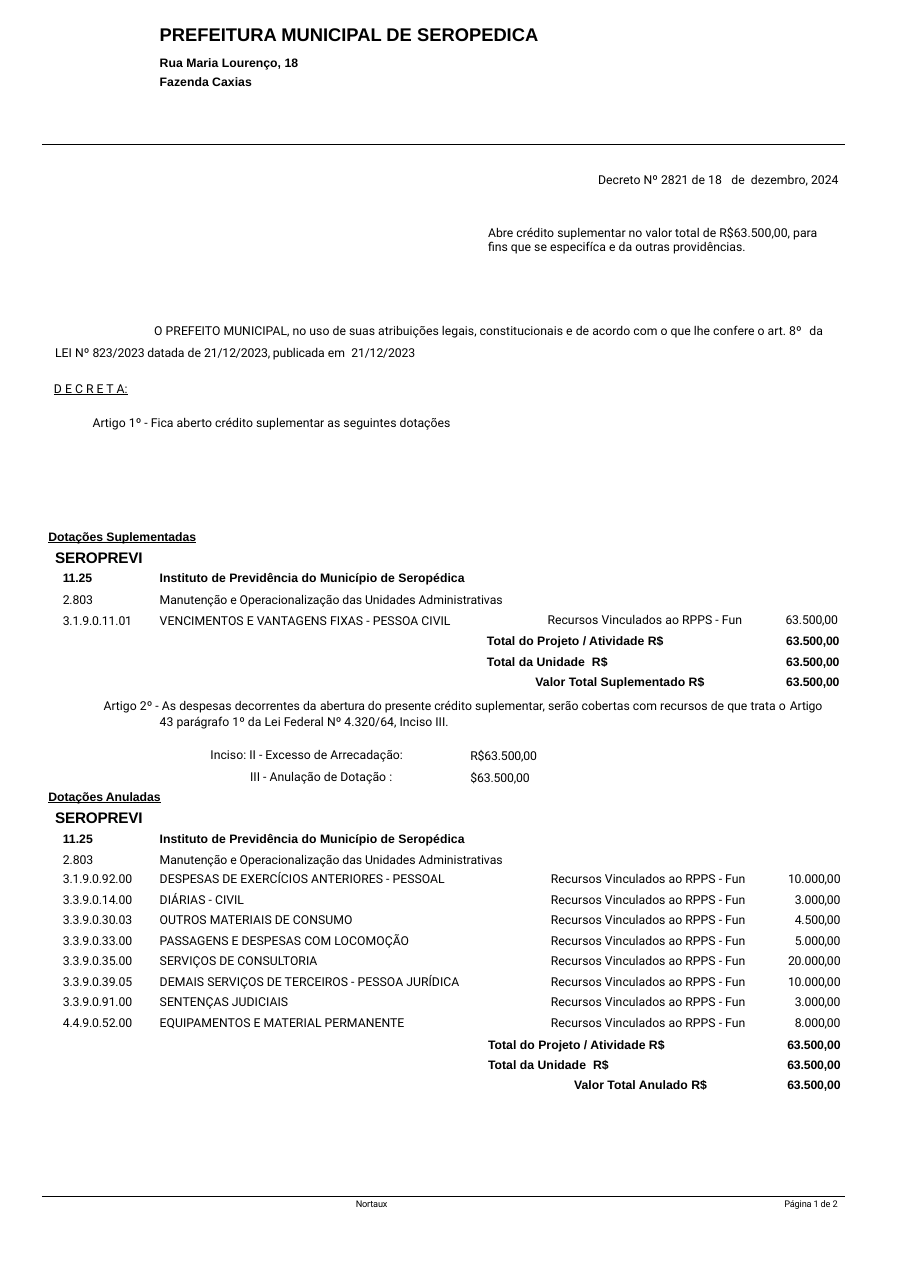
from lxml.etree import SubElement
from pptx import Presentation
from pptx.dml.color import RGBColor
from pptx.enum.shapes import MSO_CONNECTOR as CONNECTOR
from pptx.enum.text import PP_ALIGN as ALIGN
from pptx.oxml.ns import qn
from pptx.util import Inches, Pt

COLORS = {"ink": "000000"}
INK = RGBColor.from_string(COLORS["ink"])
BOLD = {"font": "Arial", "bold": True}
TIGHT = {"tracking": -0.1}
RIGHT = {"align": ALIGN.RIGHT}
UNIT = "Instituto de Previdência do Município de Seropédica"
ACTIVITY = "Manutenção e Operacionalização das Unidades Administrativas"
FUND = "Recursos Vinculados ao RPPS - Fun"
TOTAL = "63.500,00"
PROJECT_TOTAL = "Total do Projeto / Atividade R$"
UNIT_TOTAL = ["Total da Unidade", (" ", 2.2), "R$"]
CANCELLED = [
    ("3.1.9.0.92.00", "DESPESAS DE EXERCÍCIOS ANTERIORES - PESSOAL", "10.000,00"),
    ("3.3.9.0.14.00", "DIÁRIAS - CIVIL", "3.000,00"),
    ("3.3.9.0.30.03", "OUTROS MATERIAIS DE CONSUMO", "4.500,00"),
    ("3.3.9.0.33.00", "PASSAGENS E DESPESAS COM LOCOMOÇÃO", "5.000,00"),
    ("3.3.9.0.35.00", "SERVIÇOS DE CONSULTORIA", "20.000,00"),
    ("3.3.9.0.39.05", "DEMAIS SERVIÇOS DE TERCEIROS - PESSOA JURÍDICA", "10.000,00"),
    ("3.3.9.0.91.00", "SENTENÇAS JUDICIAIS", "3.000,00"),
    ("4.4.9.0.52.00", "EQUIPAMENTOS E MATERIAL PERMANENTE", "8.000,00"),
]


def write(paragraph, text, size=8, font="Roboto", bold=False, underline=False,
          tracking=0, align=ALIGN.LEFT, left=0.01, first=0, line=None, before=0):
    """Fill a paragraph; text is a string or a list of strings and (string, tracking) pairs."""
    properties = paragraph._p.get_or_add_pPr()
    properties.set("marL", str(Inches(left)))
    properties.set("indent", str(Inches(first)))
    paragraph.alignment = align
    paragraph.space_before = Pt(before)
    if line:
        paragraph.line_spacing = line
    for piece in [text] if isinstance(text, str) else text:
        words, spacing = (piece, tracking) if isinstance(piece, str) else piece
        run = paragraph.add_run()
        run.text = words
        run.font.size = Pt(size)
        run.font.name = font
        run.font.bold = bold
        run.font.underline = underline
        run.font.color.rgb = INK
        if spacing:
            run._r.get_or_add_rPr().set("spc", str(round(spacing * 100)))


def add_text(slide, x, y, width, height, *paragraphs, top=0.01):
    """Add a text box; each paragraph is a (text, format) pair."""
    frame = slide.shapes.add_textbox(
        Inches(x), Inches(y), Inches(width), Inches(height)).text_frame
    frame.word_wrap = True
    frame.margin_left = frame.margin_right = frame.margin_bottom = 0
    frame.margin_top = Inches(top)
    for index, (text, style) in enumerate(paragraphs):
        write(frame.add_paragraph() if index else frame.paragraphs[0], text, **style)


def add_rule(slide, y):
    rule = slide.shapes.add_connector(
        CONNECTOR.STRAIGHT, Inches(0.38), Inches(y), Inches(7.67), Inches(y))
    rule.line.color.rgb = INK
    rule.line.width = Pt(0.75)
    SubElement(rule._element.spPr, qn("a:effectLst"))


def add_table(slide, x, y, widths, heights):
    table = slide.shapes.add_table(
        len(heights), len(widths), Inches(x), Inches(y),
        Inches(sum(widths)), Inches(sum(heights))).table
    table.first_row = table.horz_banding = False
    for column, width in zip(table.columns, widths):
        column.width = Inches(width)
    for row, height in zip(table.rows, heights):
        row.height = Inches(height)
    for cell in table.iter_cells():
        cell.fill.background()
        cell.margin_left = cell.margin_right = cell.margin_top = cell.margin_bottom = 0
        SubElement(cell.text_frame.paragraphs[0]._p, qn("a:endParaRPr")).set("sz", "800")
    return table


def fill_cell(cell, text, top=0.02, right=0, **style):
    cell.margin_top = Inches(top)
    cell.margin_right = Inches(right)
    write(cell.text_frame.paragraphs[0], text, **style)


def fill_totals(table, first_row, labels, tops, label_styles):
    """Write the three closing rows, with amounts in the last column."""
    last = len(table.columns) - 1
    for row, (label, top, style) in enumerate(zip(labels, tops, label_styles), first_row):
        if last > 1:
            table.cell(row, 0).merge(table.cell(row, last - 1))
        fill_cell(table.cell(row, 0), label, top, **style, **BOLD)
        fill_cell(table.cell(row, last), TOTAL, top, 0.04, **RIGHT, **TIGHT, **BOLD)


def add_section_title(slide, y, width, title):
    add_text(slide, 0.43, y, width, 0.41,
             (title, dict(BOLD, underline=True, tracking=-0.05)),
             ("SEROPREVI", dict(BOLD, **TIGHT, size=10, left=0.07, before=3.4)), top=0.05)


def add_header(slide):
    add_text(slide, 1.44, 0.2, 3.49, 0.62,
             ("PREFEITURA MUNICIPAL DE SEROPEDICA", dict(BOLD, size=12)),
             ("Rua Maria Lourenço, 18", dict(BOLD, line=1.25, before=4.5)),
             ("Fazenda Caxias", dict(BOLD, line=1.25)))
    add_rule(slide, 1.31)
    add_text(slide, 5.42, 1.55, 2.24, 0.16,
             (["Decreto Nº 2821 de 18", (" ", 4), "de", (" ", 2), "dezembro, 2024"], {}))


def add_preamble(slide):
    add_text(slide, 4.42, 2.03, 3.04, 0.29,
             ("Abre crédito suplementar no valor total de R$63.500,00, para fins que se "
              "especifíca e da outras providências.", {"line": Pt(9.2)}), top=0.02)
    add_text(slide, 0.48, 2.86, 7.09, 1.06,
             (["O PREFEITO MUNICIPAL, no uso de suas atribuições legais, constitucionais e de "
               "acordo com o que lhe confere o art. 8º", (" ", 2), "da LEI Nº ",
               ("823/2023 datada", -0.1), " de ", ("21/12/2023, publicada", -0.1), " em",
               (" ", 2), ("21/12/2023", -0.1)], {"left": 0.02, "first": 0.9, "line": 1.48}),
             ("D E C R E T A:", {"underline": True, "before": 14}),
             ("Artigo 1º - Fica aberto crédito suplementar as seguintes dotações",
              {"left": 0.36, "before": 13}))


def add_supplemented(slide):
    add_section_title(slide, 4.75, 1.38, "Dotações Suplementadas")
    add_text(slide, 0.56, 5.1, 0.68, 0.61,
             ("11.25", dict(BOLD, **TIGHT)),
             ("2.803", dict(TIGHT, before=4.6)),
             ("3.1.9.0.11.01", dict(TIGHT, before=3.9)), top=0.08)
    add_text(slide, 1.44, 5.1, 3.18, 0.61,
             (UNIT, dict(BOLD, line=1.45)),
             (ACTIVITY, {"line": 1.45, "tracking": -0.05}),
             ("VENCIMENTOS E VANTAGENS FIXAS - PESSOA CIVIL", {"line": 1.45}), top=0.02)
    add_text(slide, 4.96, 5.55, 1.85, 0.16, (FUND, {}))
    add_text(slide, 7.12, 5.55, 0.52, 0.16, (TOTAL, TIGHT))
    totals = add_table(slide, 4.39, 5.76, [2.38, 0.89], [0.16, 0.19, 0.15])
    fill_totals(totals, 0, [PROJECT_TOTAL, UNIT_TOTAL, "Valor Total Suplementado R$"],
                [0, 0.03, 0.02], [{"left": 0.03}, {"left": 0.03}, {"left": 0.47}])


def add_article_two(slide):
    add_text(slide, 0.92, 6.32, 6.6, 0.32,
             (["Artigo 2º - As despesas decorrentes da ", ("abertura ", -0.1), "do ",
               ("presente ", -0.1), "crédito suplementar, serão cobertas com recursos de que "
               "trata o ", ("Artigo ", -0.1), "43 parágrafo 1º da Lei Federal Nº 4.320/64, "
               "Inciso III."], {"left": 0.53, "first": -0.51, "line": 1.09}))
    add_text(slide, 1.89, 6.71, 1.82, 0.42,
             ("Inciso: II - Excesso de Arrecadação:",
              {"left": 0.38, "first": -0.36, "line": 1.48}),
             ("III - Anulação de Dotação :", {"left": 0.38, "line": 1.48}))
    add_text(slide, 4.26, 6.71, 0.66, 0.42,
             ("R$63.500,00", TIGHT), ("$63.500,00", dict(TIGHT, before=4.6)), top=0.08)


def add_cancelled(slide):
    add_section_title(slide, 7.11, 1.06, "Dotações Anuladas")
    table = add_table(slide, 0.54, 7.55, [0.8, 3.45, 2.18, 0.7],
                      [0.16, 0.19] + [0.19, 0.18] * 4 + [0.2, 0.19, 0.15])
    table.cell(0, 2).merge(table.cell(1, 3))
    for row, (code, name, top, style) in enumerate([
            ("11.25", UNIT, 0, BOLD), ("2.803", ACTIVITY, 0.03, {"tracking": -0.05})]):
        fill_cell(table.cell(row, 0), code, top, left=0.03, **style)
        fill_cell(table.cell(row, 1), name, top, left=0.11, **style)
    for row, (code, name, amount) in enumerate(CANCELLED, 2):
        fill_cell(table.cell(row, 0), code, left=0.03, **TIGHT)
        fill_cell(table.cell(row, 1), name, left=0.11)
        fill_cell(table.cell(row, 2), FUND, align=ALIGN.CENTER)
        fill_cell(table.cell(row, 3), amount, right=0.04, **RIGHT, **TIGHT)
    fill_totals(table, 2 + len(CANCELLED),
                [PROJECT_TOTAL, UNIT_TOTAL, "Valor Total Anulado R$"], [0.05, 0.03, 0.02],
                [{"left": 3.89}, {"left": 3.89}, dict(RIGHT, right=0.55)])


def add_footer(slide):
    add_rule(slide, 10.86)
    add_text(slide, 3.22, 10.87, 0.33, 0.12, ("Nortaux", dict(TIGHT, size=6)))
    add_text(slide, 7.11, 10.87, 0.54, 0.12, ("Página 1 de 2", dict(TIGHT, size=6)))


def main():
    deck = Presentation()
    deck.slide_width, deck.slide_height = Inches(8.26), Inches(11.69)
    slide = deck.slides.add_slide(deck.slide_layouts[6])
    for add_part in (add_header, add_preamble, add_supplemented,
                     add_article_two, add_cancelled, add_footer):
        add_part(slide)
    deck.save("out.pptx")


if __name__ == "__main__":
    main()
